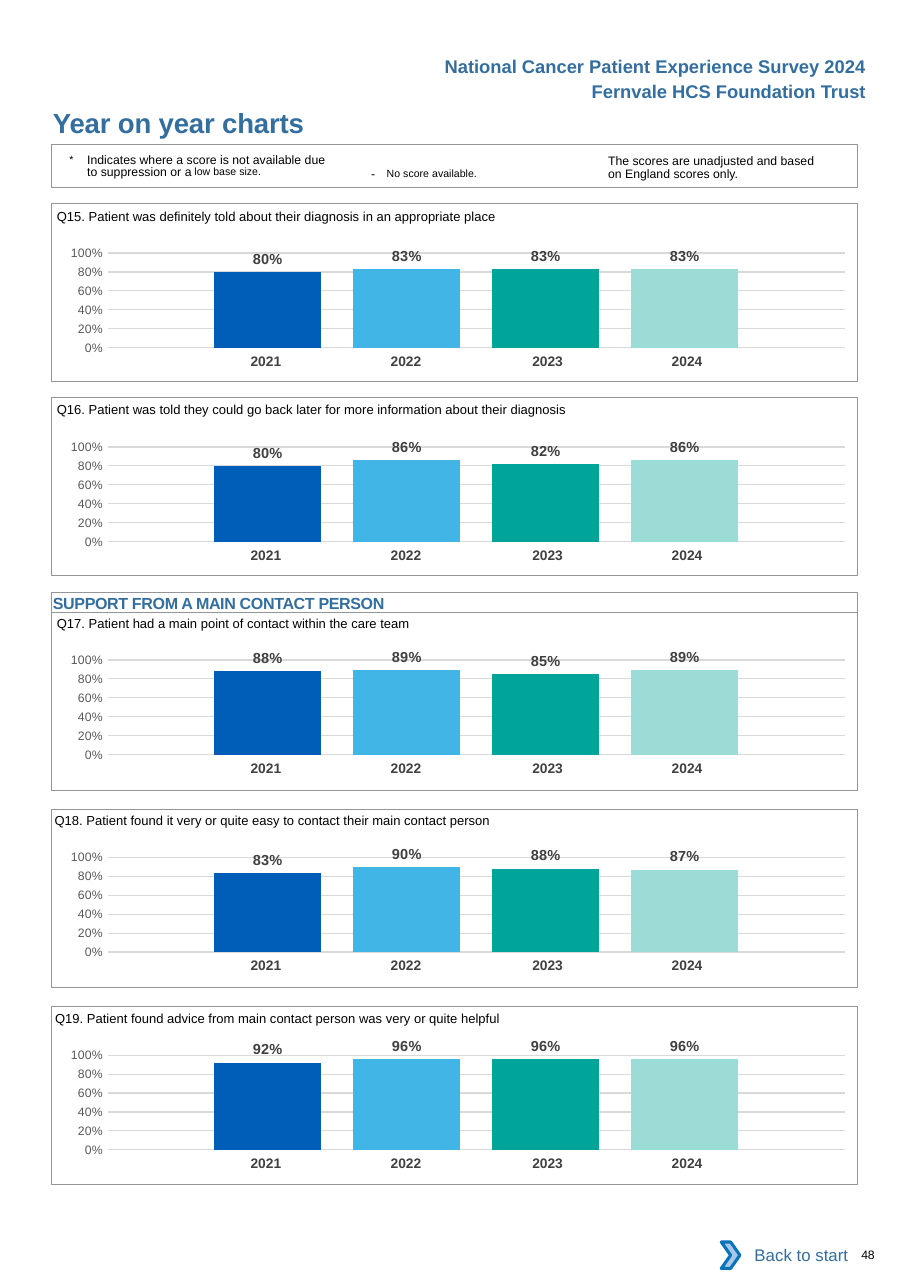
import pptx
import pptx.chart.data
import pptx.dml.color
import pptx.enum.chart
import pptx.enum.shapes
import pptx.enum.text
import pptx.oxml
import pptx.oxml.ns
import pptx.util

Cm = pptx.util.Cm
Pt = pptx.util.Pt
qn = pptx.oxml.ns.qn
ALIGN = pptx.enum.text.PP_ALIGN
SHAPE = pptx.enum.shapes.MSO_SHAPE

HUES = {
    "title": "336E9F", "text": "000000", "year": "414042", "frame": "939598",
    "axis": "595959", "grid": "D9D9D9", "label": "404040", "white": "FFFFFF",
    "arrow": "A8C7E9", "edge": "0A74BB",
    "2021": "005EB8", "2022": "41B6E6", "2023": "00A499", "2024": "9CDCD7",
}
YEARS = ["2021", "2022", "2023", "2024"]
LEFT, WIDTH = 1.19, 18.59
ITEMS = [
    (4.69, 5.36, 1.31, 4.8,
     "Q15. Patient was definitely told about their diagnosis in an appropriate place",
     (0.80, 0.83, 0.83, 0.83)),
    (9.16, 9.83, 1.31, 9.25,
     "Q16. Patient was told they could go back later for more information about their diagnosis",
     (0.80, 0.86, 0.82, 0.86)),
    (14.11, 14.74, 1.31, 14.19,
     "Q17. Patient had a main point of contact within the care team",
     (0.88, 0.89, 0.85, 0.89)),
    (18.65, 19.29, 1.26, 18.72,
     "Q18. Patient found it very or quite easy to contact their main contact person",
     (0.83, 0.90, 0.88, 0.87)),
    (23.19, 23.85, 1.27, 23.29,
     "Q19. Patient found advice from main contact person was very or quite helpful",
     (0.92, 0.96, 0.96, 0.96)),
]


def tint(name):
    """Return the named colour."""
    return pptx.dml.color.RGBColor.from_string(HUES[name])


def style(font, size, hue, bold=False):
    """Set the face, size, colour and weight of a font."""
    font.name, font.size, font.bold = "Arial", Pt(size), bold
    font.color.rgb = tint(hue)


def write(frame, parts, hue="text", bold=False, align=ALIGN.LEFT, pads=(0, 0, 0, 0), wrap=True):
    """Fill a frame with runs given as text, size, raise and tracking."""
    frame.word_wrap = wrap
    frame.margin_left, frame.margin_top, frame.margin_right, frame.margin_bottom = map(Cm, pads)
    para = frame.paragraphs[0]
    para.alignment = align
    for text, size, lift, track in parts:
        run = para.add_run()
        run.text = text
        style(run.font, size, hue, bold)
        props = run.font._element
        if lift:
            props.set("baseline", str(lift * 1000))
        if track:
            props.set("spc", str(int(track * 100)))
    return para


def add_text(slide, area, parts, **looks):
    """Add a text box and return its paragraph."""
    box = slide.shapes.add_textbox(*map(Cm, area))
    return write(box.text_frame, parts, **looks)


def add_box(slide, area, kind=SHAPE.RECTANGLE, fill=None, line=None, weight=0.5):
    """Add a plain shape."""
    box = slide.shapes.add_shape(kind, *map(Cm, area))
    box.shadow.inherit = False
    if fill:
        box.fill.solid()
        box.fill.fore_color.rgb = tint(fill)
    else:
        box.fill.background()
    if line:
        box.line.color.rgb = tint(line)
        box.line.width = Pt(weight)
    else:
        box.line.fill.background()
    return box


def set_plot(chart):
    """Fix the inner plot area of a chart."""
    area = chart._chartSpace.chart.plotArea
    for old in area.findall(qn("c:layout")):
        area.remove(old)
    spots = {"x": 0.079, "y": 0.145, "w": 0.915, "h": 0.666}
    modes = '<c:layoutTarget val="inner"/><c:xMode val="edge"/><c:yMode val="edge"/>'
    sizes = "".join(f'<c:{key} val="{val}"/>' for key, val in spots.items())
    area.insert(0, pptx.oxml.parse_xml(
        f'<c:layout {pptx.oxml.ns.nsdecls("c")}><c:manualLayout>{modes}{sizes}'
        '</c:manualLayout></c:layout>'))


def add_bars(slide, top, scores):
    """Add the column chart of one question."""
    data = pptx.chart.data.CategoryChartData(number_format="0%")
    data.categories = ["1"]
    for num, score in enumerate(scores, 1):
        data.add_series(f"Series {num}", [score])
    kinds = pptx.enum.chart
    chart = slide.shapes.add_chart(
        kinds.XL_CHART_TYPE.COLUMN_CLUSTERED, Cm(1.01), Cm(top), Cm(WIDTH), Cm(3.28), data).chart
    chart.has_legend = chart.has_title = False
    chart.font.name, chart.font.size = "Calibri", Pt(10)
    chart.font.color.rgb = tint("text")
    chart.category_axis.visible = False
    axis = chart.value_axis
    axis.minimum_scale, axis.maximum_scale, axis.major_unit = 0, 1, 0.2
    axis.major_tick_mark = axis.minor_tick_mark = kinds.XL_TICK_MARK.NONE
    axis.format.line.fill.background()
    axis.major_gridlines.format.line.color.rgb = tint("grid")
    axis.major_gridlines.format.line.width = Pt(0.75)
    axis.tick_labels.number_format = "0%"
    axis.tick_labels.number_format_is_linked = False
    style(axis.tick_labels.font, 8, "axis")
    plot = chart.plots[0]
    plot.gap_width, plot.overlap, plot.vary_by_categories = 200, -30, False
    for bar, year in zip(plot.series, YEARS):
        bar.format.fill.solid()
        bar.format.fill.fore_color.rgb = tint(year)
        tags = bar.data_labels
        tags.show_value = True
        tags.position = kinds.XL_LABEL_POSITION.OUTSIDE_END
        tags.number_format, tags.number_format_is_linked = "0%", False
        style(tags.font, 9.5, "label", True)
    set_plot(chart)


def add_years(slide, top):
    """Add the row of years below a chart."""
    wides = (3.23, 3.23, 3.4, 3.23)
    frame = slide.shapes.add_table(1, 4, Cm(4.39), Cm(top), Cm(sum(wides)), Cm(0.69))
    grid = frame.table
    grid.first_row = grid.horz_banding = False
    for mark in frame.element.iter(qn("a:tableStyleId")):
        mark.text = "{2D5ABB26-0587-4C30-8999-92F81FD0307C}"
    grid.rows[0].height = Cm(0.69)
    for col, (year, wide, right) in enumerate(zip(YEARS, wides, (0, 0, 0.1, 0.3))):
        grid.columns[col].width = Cm(wide)
        cell = grid.cell(0, col)
        cell.fill.background()
        cell.margin_left, cell.margin_right = Cm(0.25), Cm(right)
        cell.margin_top = cell.margin_bottom = Cm(0.13)
        para = cell.text_frame.paragraphs[0]
        para.text = year
        para.alignment = ALIGN.CENTER
        style(para.runs[0].font, 9, "year", True)


def add_notes(slide):
    """Add the framed key to the charts."""
    add_box(slide, (LEFT, 3.33, WIDTH, 0.99), line="frame", weight=0.75)
    low = add_text(slide, (1.6, 3.51, 6.07, 0.7), [
        ("*\t", 12, 3, 0),
        ("Indicates where a score is not available due to suppression or ", 8, 0, 0),
        ("a ", 8, 0, -0.5),
        ("low base size.", 12, 7, 0)], pads=(0, 0.08, 0, 0))
    props = low._p.get_or_add_pPr()
    props.set("marL", str(Cm(0.41)))
    props.set("indent", str(-Cm(0.41)))
    add_text(slide, (8.31, 3.56, 4.65, 0.61),
             [("- ", 8, 0, 2.6), ("No score available.", 12, 3, 0)], pads=(0.25, 0.13, 0.25, 0.13))
    base = add_text(slide, (14.02, 3.51, 5.11, 0.69),
                    [("The scores are unadjusted and based on England scores only.", 8, 0, 0)],
                    pads=(0, 0.08, 0, 0))
    for para in (low, base):
        para.line_spacing = Pt(8.1)


def main():
    """Build the page of charts."""
    deck = pptx.Presentation()
    deck.slide_width, deck.slide_height = Cm(20.98), Cm(29.69)
    slide = deck.slides.add_slide(deck.slide_layouts[6])
    pads = (0.25, 0.13, 0.25, 0.13)
    for area, text in [
            ((9.96, 1.15, 10.26, 0.76), "National Cancer Patient Experience Survey 2024"),
            ((13.36, 1.73, 6.86, 0.76), "Fernvale HCS Foundation Trust")]:
        add_text(slide, area, [(text, 12, 0, 0)], hue="title", bold=True,
                 align=ALIGN.RIGHT, pads=pads, wrap=False)
    add_text(slide, (1.22, 2.44, 8, 0.76), [("Year on year charts", 18, 0, -0.1)],
             hue="title", bold=True)
    add_notes(slide)
    for top, plot, left, head, text, scores in ITEMS:
        add_bars(slide, plot, scores)
        add_years(slide, plot + 2.67)
        add_box(slide, (LEFT, top, WIDTH, 4.11), line="frame")
        add_text(slide, (left, head, 16, 0.4), [(text, 8.5, 0, 0)])
    band = add_box(slide, (LEFT, 13.65, WIDTH, 0.46), line="frame")
    band.text_frame.vertical_anchor = pptx.enum.text.MSO_ANCHOR.TOP
    write(band.text_frame, [("SUPPORT FROM A MAIN CONTACT PERSON", 10.5, 0, -0.2)],
          hue="title", bold=True, pads=(0.03, 0.02, 0, 0))
    back = add_box(slide, (16.81, 28.4, 3, 1.07), fill="white")
    back.text_frame.vertical_anchor = pptx.enum.text.MSO_ANCHOR.MIDDLE
    write(back.text_frame, [("Back to start", 11, 0, 0)], hue="title", align=ALIGN.RIGHT, pads=pads)
    add_box(slide, (16.63, 28.63, 0.43, 0.61), SHAPE.CHEVRON, "arrow", "edge", 2)
    add_text(slide, (19.86, 28.76, 1.05, 0.33), [("48", 8, 0, -0.2)])
    deck.save("out.pptx")


if __name__ == "__main__":
    main()
